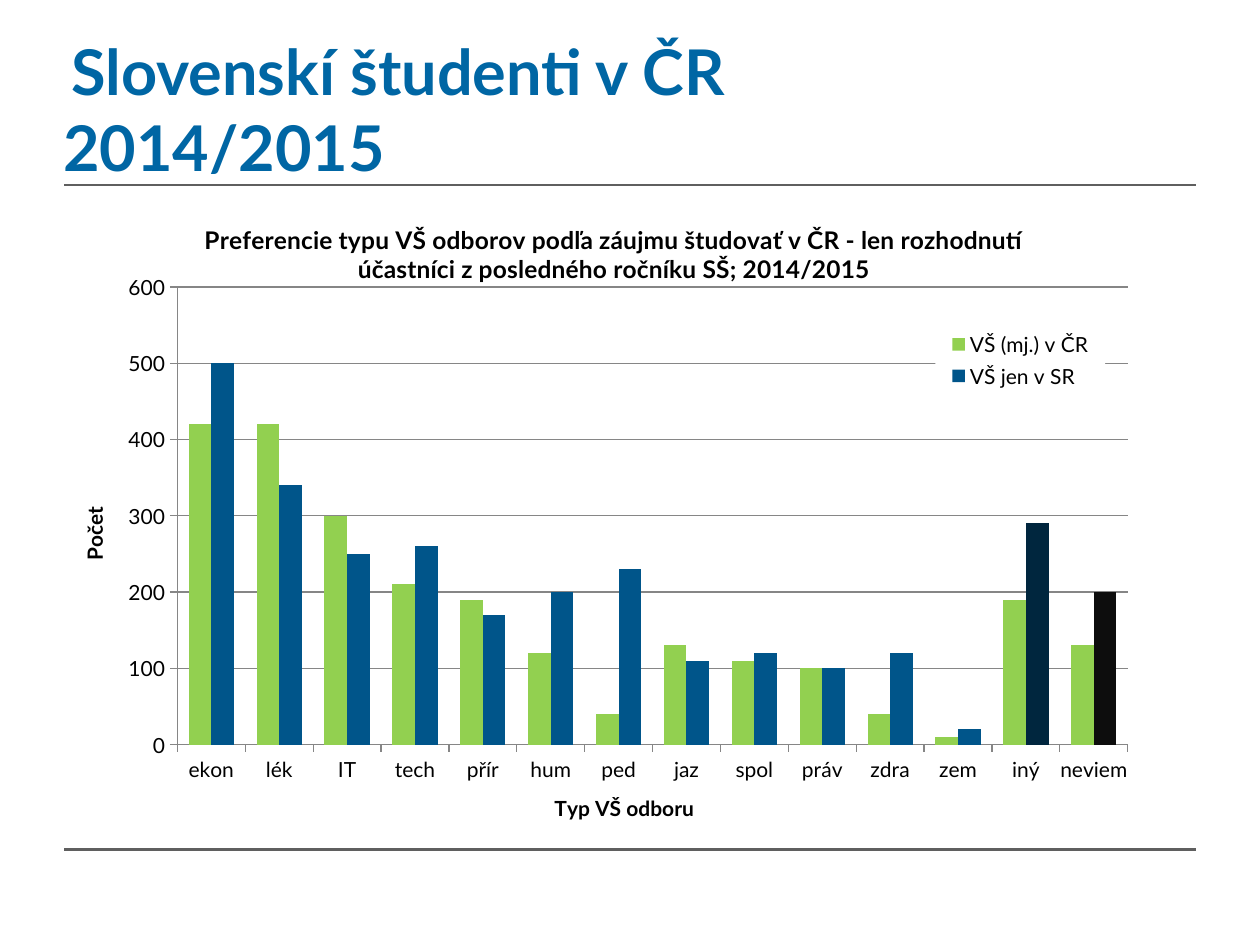
from lxml.etree import SubElement
from pptx import Presentation
from pptx.chart.data import CategoryChartData
from pptx.dml.color import RGBColor
from pptx.enum.chart import XL_CHART_TYPE as ChartType
from pptx.enum.chart import XL_LEGEND_POSITION as LegendPosition
from pptx.enum.chart import XL_TICK_MARK as TickMark
from pptx.enum.shapes import MSO_CONNECTOR as Connector
from pptx.enum.text import MSO_ANCHOR as Anchor
from pptx.enum.text import MSO_AUTO_SIZE as AutoSize
from pptx.enum.text import PP_ALIGN as Align
from pptx.oxml.ns import qn
from pptx.util import Inches, Pt

FONT = "Lato"
LEFT, WIDTH = 0.51, 8.98
RULE_TOPS = (1.47, 6.74)
FIELDS = ["ekon", "lék", "IT", "tech", "přír", "hum", "ped", "jaz",
          "spol", "práv", "zdra", "zem", "iný", "neviem"]
PREFERENCES = [
    ("VŠ (mj.) v ČR", "92D050",
     [420, 420, 300, 210, 190, 120, 40, 130, 110, 100, 40, 10, 190, 130]),
    ("VŠ jen v SR", "00558A",
     [500, 340, 250, 260, 170, 200, 230, 110, 120, 100, 120, 20, 290, 200]),
]
SR_HIGHLIGHTS = {"iný": "00263E", "neviem": "0D0D0D"}


def rgb(value):
    return RGBColor.from_string(value)


def paint(fill, color):
    fill.solid()
    fill.fore_color.rgb = rgb(color)


def style_font(font, size, color="000000", bold=False):
    font.name = FONT
    font.size = Pt(size)
    font.bold = bold
    font.color.rgb = rgb(color)


def add_rule(slide, top):
    rule = slide.shapes.add_connector(
        Connector.STRAIGHT, Inches(LEFT), Inches(top),
        Inches(LEFT + WIDTH), Inches(top))
    rule.line.color.rgb = rgb("5F5F5F")
    rule.line.width = Pt(1.5)
    SubElement(rule._element.spPr, qn("a:effectLst"))


def fill_heading(heading):
    heading.left, heading.top = Inches(0.4), Inches(0.21)
    heading.width, heading.height = Inches(9.11), Inches(1.2)
    frame = heading.text_frame
    frame.auto_size = AutoSize.NONE
    frame.vertical_anchor = Anchor.TOP
    paragraph = frame.paragraphs[0]
    paragraph.alignment = Align.LEFT
    paragraph.add_run().text = " "
    paragraph.add_run().text = "Slovenskí študenti v ČR"
    paragraph.add_line_break()
    paragraph.add_run().text = "2014/2015"
    for run, size in zip(paragraph.runs, (20, 36, 36)):
        style_font(run.font, size, "0066A4", True)
    line_break = paragraph._p.find(qn("a:br"))
    SubElement(line_break, qn("a:rPr"), sz="3600")


def place(element, index, inner=False, **position):
    for old in element.findall(qn("c:layout")):
        element.remove(old)
    layout = element.makeelement(qn("c:layout"))
    element.insert(index, layout)
    manual = SubElement(layout, qn("c:manualLayout"))
    if inner:
        SubElement(manual, qn("c:layoutTarget"), val="inner")
    for side in ("x", "y"):
        SubElement(manual, qn(f"c:{side}Mode"), val="edge")
    for side, value in position.items():
        SubElement(manual, qn(f"c:{side}"), val=str(value))


def set_caption(caption, text, size, x, y):
    caption.text_frame.text = text
    style_font(caption.text_frame.paragraphs[0].runs[0].font, size, bold=True)
    place(caption._element, 1, x=x, y=y)


def style_axis(axis, text, x, y):
    axis.has_title = True
    set_caption(axis.axis_title, text, 12, x, y)
    axis.major_tick_mark = TickMark.OUTSIDE
    axis.minor_tick_mark = TickMark.NONE
    axis.format.line.color.rgb = rgb("868686")
    style_font(axis.tick_labels.font, 12)


def style_legend(chart):
    chart.has_legend = True
    legend = chart.legend
    legend.position = LegendPosition.RIGHT
    legend.include_in_layout = False
    style_font(legend.font, 12)
    place(legend._element, 1, x=0.77, y=0.22, w=0.15, h=0.11)
    box = legend._element.makeelement(qn("c:spPr"))
    legend._element.find(qn("c:overlay")).addnext(box)
    white = SubElement(box, qn("a:solidFill"))
    SubElement(white, qn("a:srgbClr"), val="FFFFFF")


def add_preferences(slide):
    data = CategoryChartData()
    data.categories = FIELDS
    for name, _, values in PREFERENCES:
        data.add_series(name, values)
    chart = slide.shapes.add_chart(
        ChartType.COLUMN_CLUSTERED, Inches(LEFT), Inches(1.47),
        Inches(WIDTH), Inches(5.09), data).chart
    style_font(chart.font, 12)
    chart.has_title = True
    set_caption(chart.chart_title,
                "Preferencie typu VŠ odborov podľa záujmu študovať v ČR - "
                "len rozhodnutí účastníci z posledného ročníku SŠ; 2014/2015",
                14, 0.12, 0.05)
    style_axis(chart.category_axis, "Typ VŠ odboru", 0.43, 0.95)
    style_axis(chart.value_axis, "Počet", 0.01, 0.5)
    chart.value_axis.minimum_scale = 0
    chart.value_axis.maximum_scale = 600
    chart.value_axis.major_unit = 100
    chart.value_axis.major_gridlines.format.line.color.rgb = rgb("868686")
    style_legend(chart)

    plot = chart.plots[0]
    plot.gap_width = 100
    plot.overlap = 0
    plot.vary_by_categories = False
    for series, (_, color, _) in zip(plot.series, PREFERENCES):
        series.invert_if_negative = False
        paint(series.format.fill, color)
    for field, color in SR_HIGHLIGHTS.items():
        point = plot.series[1].points[FIELDS.index(field)]
        paint(point.format.fill, color)
    plot_area = chart._chartSpace.chart.plotArea
    place(plot_area, 0, inner=True, x=0.1, y=0.16, w=0.84, h=0.72)


def main():
    presentation = Presentation()
    presentation.slide_width = Inches(10)
    presentation.slide_height = Inches(7.5)
    slide = presentation.slides.add_slide(presentation.slide_layouts[5])
    for top in RULE_TOPS:
        add_rule(slide, top)
    fill_heading(slide.shapes.title)
    add_preferences(slide)
    presentation.save("out.pptx")


if __name__ == "__main__":
    main()
